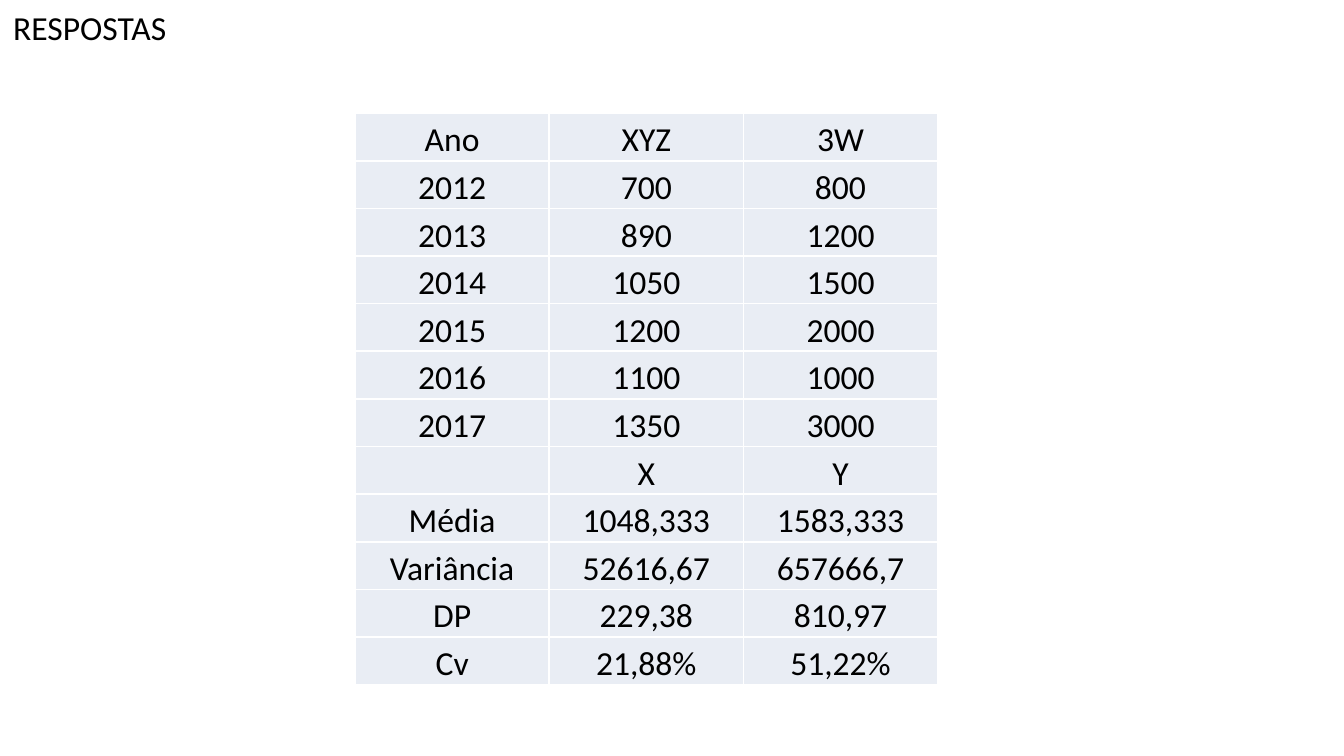
from dataclasses import dataclass

from lxml import etree
from pptx import Presentation
from pptx.dml.color import RGBColor
from pptx.enum.text import MSO_ANCHOR, MSO_AUTO_SIZE, PP_ALIGN
from pptx.oxml.ns import qn
from pptx.util import Cm, Pt

CENTER = PP_ALIGN.CENTER
BOTTOM = MSO_ANCHOR.BOTTOM
GROW = MSO_AUTO_SIZE.SHAPE_TO_FIT_TEXT


@dataclass(frozen=True)
class Theme:
    font: str = "Calibri"
    size: Pt = Pt(18)
    ink: RGBColor = RGBColor(0x00, 0x00, 0x00)
    cell: RGBColor = RGBColor(0xE9, 0xED, 0xF4)
    border: RGBColor = RGBColor(0xFF, 0xFF, 0xFF)
    border_width: Pt = Pt(1)


THEME = Theme()

ANSWERS = [
    ("Ano", "XYZ", "3W"),
    ("2012", "700", "800"),
    ("2013", "890", "1200"),
    ("2014", "1050", "1500"),
    ("2015", "1200", "2000"),
    ("2016", "1100", "1000"),
    ("2017", "1350", "3000"),
    ("", "X", "Y"),
    ("Média", "1048,333", "1583,333"),
    ("Variância", "52616,67", "657666,7"),
    ("DP", "229,38", "810,97"),
    ("Cv", "21,88%", "51,22%"),
]
COLUMN_WIDTH = 3.67
ROW_HEIGHT = 0.9


def style_paragraph(paragraph):
    paragraph.font.name = THEME.font
    paragraph.font.size = THEME.size
    paragraph.font.color.rgb = THEME.ink


def add_heading(slide, text):
    heading = slide.shapes.add_textbox(Cm(0), Cm(0), Cm(6.3), Cm(1.02))
    frame = heading.text_frame
    frame.word_wrap = True
    frame.auto_size = GROW
    frame.text = text
    style_paragraph(frame.paragraphs[0])


def add_borders(cell):
    properties = cell._tc.get_or_add_tcPr()
    for side in ("lnL", "lnR", "lnT", "lnB"):
        line = etree.SubElement(properties, qn(f"a:{side}"), w=str(THEME.border_width))
        fill = etree.SubElement(line, qn("a:solidFill"))
        etree.SubElement(fill, qn("a:srgbClr"), val=str(THEME.border))


def fill_cell(cell, text):
    cell.text = text
    cell.vertical_anchor = BOTTOM
    cell.margin_left = cell.margin_right = cell.margin_top = Cm(0.03)
    cell.margin_bottom = Cm(0)
    add_borders(cell)
    cell.fill.solid()
    cell.fill.fore_color.rgb = THEME.cell
    paragraph = cell.text_frame.paragraphs[0]
    paragraph.alignment = CENTER
    style_paragraph(paragraph)


def add_answer_table(slide, rows):
    row_count, column_count = len(rows), len(rows[0])
    answers = slide.shapes.add_table(
        row_count, column_count, Cm(6.71), Cm(2.14),
        Cm(COLUMN_WIDTH * column_count), Cm(ROW_HEIGHT * row_count),
    ).table
    answers.first_row = False
    answers.horz_banding = False
    for column in answers.columns:
        column.width = Cm(COLUMN_WIDTH)
    for row, values in zip(answers.rows, rows):
        row.height = Cm(ROW_HEIGHT)
        for cell, value in zip(row.cells, values):
            fill_cell(cell, value)


def main():
    presentation = Presentation()
    presentation.slide_width = Cm(25.4)
    presentation.slide_height = Cm(14.29)
    slide = presentation.slides.add_slide(presentation.slide_layouts[6])

    # Yearly values followed by their statistics
    add_answer_table(slide, ANSWERS)

    # Heading in the top left corner
    add_heading(slide, "RESPOSTAS")

    presentation.save("out.pptx")


if __name__ == "__main__":
    main()
